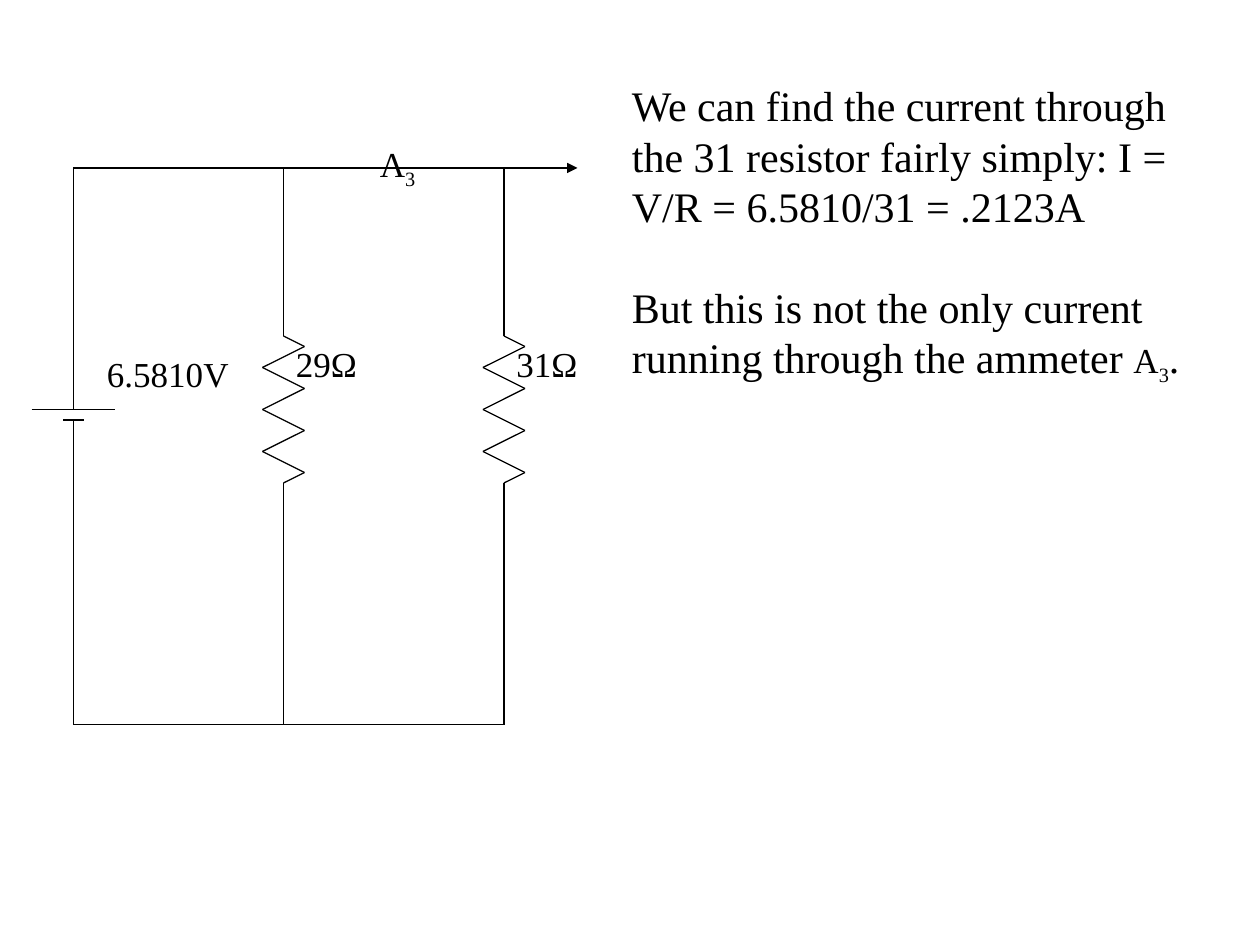
from lxml.etree import SubElement
from pptx import Presentation
from pptx.dml.color import RGBColor
from pptx.enum.shapes import MSO_CONNECTOR
from pptx.enum.text import MSO_AUTO_SIZE
from pptx.oxml.ns import qn
from pptx.util import Pt

COLORS = {"ink": "000000"}
FONT = "Times New Roman"
LEFT, MIDDLE, RIGHT = 42, 162, 288
TOP, BOTTOM = 96, 414
RESISTOR_TOP, RESISTOR_BOTTOM = 192, 276


def add_wire(slide, start, end, arrow=False):
    wire = slide.shapes.add_connector(
        MSO_CONNECTOR.STRAIGHT, *(Pt(value) for value in (*start, *end)))
    wire.line.color.rgb = RGBColor.from_string(COLORS["ink"])
    wire.line.width = Pt(0.75)
    if arrow:
        SubElement(wire.line._get_or_add_ln(), qn("a:tailEnd"), type="triangle")
    SubElement(wire._element.spPr, qn("a:effectLst"))


def add_path(slide, points):
    for start, end in zip(points, points[1:]):
        add_wire(slide, start, end)


def add_text_box(slide, left, top, width, height, wrap=False):
    box = slide.shapes.add_textbox(Pt(left), Pt(top), Pt(width), Pt(height))
    box.text_frame.word_wrap = wrap
    box.text_frame.auto_size = MSO_AUTO_SIZE.SHAPE_TO_FIT_TEXT
    return box.text_frame


def style_paragraph(paragraph, size):
    paragraph.font.name = FONT
    paragraph.font.size = Pt(size)
    paragraph.font.color.rgb = RGBColor.from_string(COLORS["ink"])


def add_run(paragraph, text, size=None, subscript=False):
    run = paragraph.add_run()
    run.text = text
    if size:
        run.font.size = Pt(size)
    if subscript:
        run.font._element.set("baseline", "-25000")


def add_label(slide, left, top, width, text, subscript=""):
    paragraph = add_text_box(slide, left, top, width, 31).paragraphs[0]
    style_paragraph(paragraph, 20)
    add_run(paragraph, text)
    if subscript:
        add_run(paragraph, subscript, subscript=True)


def add_battery(slide):
    add_path(slide, [(LEFT, TOP), (LEFT, 234)])
    add_wire(slide, (LEFT - 24, 234), (LEFT + 24, 234))
    add_wire(slide, (LEFT - 6, 240), (LEFT + 6, 240))
    add_path(slide, [(LEFT, 240), (LEFT, BOTTOM)])
    add_label(slide, 54, 198, 84, "6.5810V")


def add_resistor_branch(slide, x, label):
    zigzag = [(x + (-12 if step % 2 else 12), RESISTOR_TOP + 6 + 12 * step)
              for step in range(7)]
    add_path(slide, [(x, TOP), (x, RESISTOR_TOP), *zigzag,
                     (x, RESISTOR_BOTTOM), (x, 348), (x, BOTTOM)])
    add_label(slide, x, RESISTOR_TOP, 50, label)


def add_explanation(slide):
    frame = add_text_box(slide, 354, 42, 336, 237.6, wrap=True)
    current = frame.paragraphs[0]
    style_paragraph(current, 24)
    add_run(current, "We can find the current through the 31 resistor fairly "
                     "simply: I = V/R = 6.5810/31 = .2123A")
    caveat = frame.add_paragraph()
    style_paragraph(caveat, 24)
    caveat.space_before = Pt(28.8)
    add_run(caveat, "But this is not the only current running through the ammeter ")
    add_run(caveat, "A", size=20)
    add_run(caveat, "3", size=20, subscript=True)
    add_run(caveat, ".")


def main():
    presentation = Presentation()
    presentation.slide_width, presentation.slide_height = Pt(720), Pt(540)
    slide = presentation.slides.add_slide(presentation.slide_layouts[6])
    add_battery(slide)
    for y in (TOP, BOTTOM):
        add_path(slide, [(LEFT, y), (78, y), (RIGHT, y)])
    add_resistor_branch(slide, MIDDLE, "29Ω")
    add_resistor_branch(slide, RIGHT, "31Ω")
    add_explanation(slide)
    add_label(slide, 210, 78, 35, "A", subscript="3")
    add_wire(slide, (RIGHT, TOP), (330, TOP), arrow=True)
    presentation.save("out.pptx")


if __name__ == "__main__":
    main()
